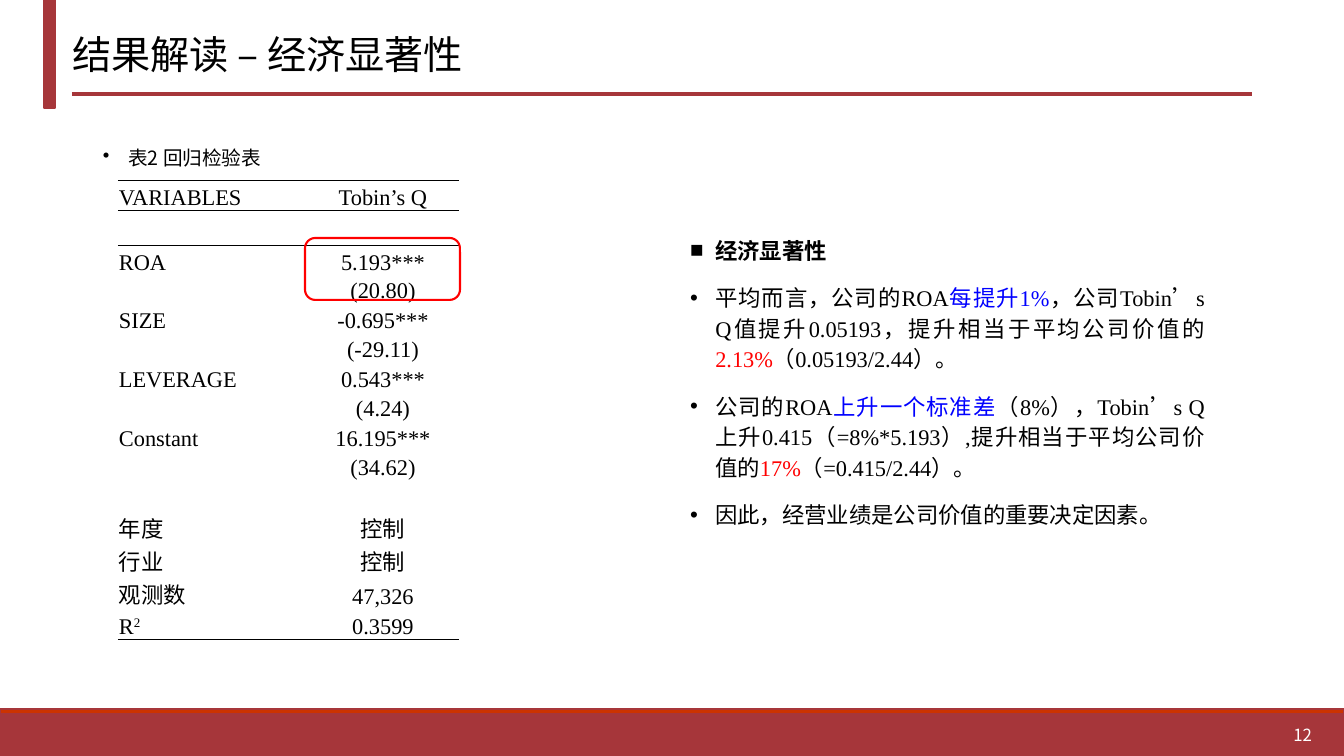
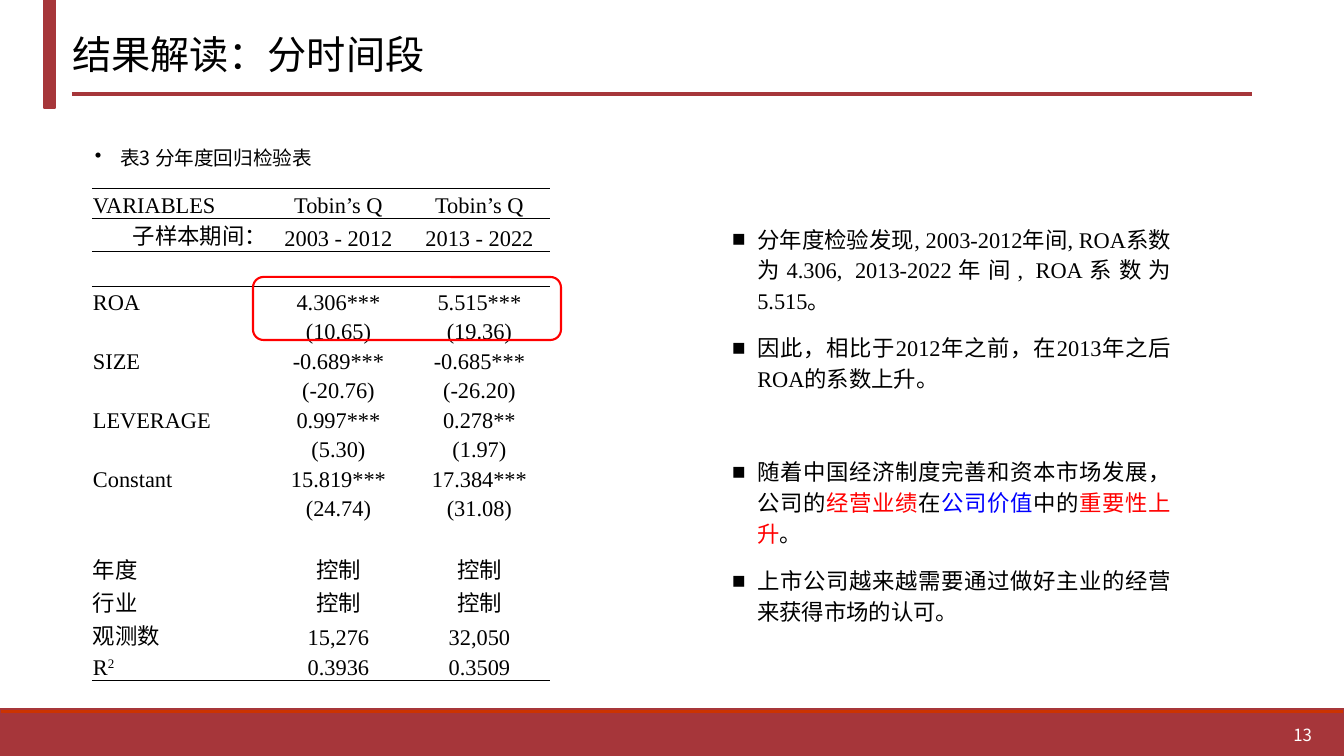
"""Two slides that interpret regression results: economic significance and sub-periods."""
from lxml import etree
from pptx import Presentation
from pptx import util as u
from pptx.dml.color import RGBColor
from pptx.enum import shapes, text
from pptx.oxml import ns

SCALE = 12192000 / 1344
COLORS = {"text": "000000", "band": "A6363A", "edge": "CC3300", "mark": "FF0000",
          "blue": "0000FF", "page": "FFFFFF"}
RGB = {name: RGBColor.from_string(value) for name, value in COLORS.items()}
SANS, SERIF = "Noto Sans CJK SC", "Times New Roman"
NO_STYLE = "{2D5ABB26-0587-4C30-8999-92F81FD0307C}"
FIRST_PAGE = 12
ROW, T_ROW, GAP_ROW, CJK_ROW = 30, 29, 35, 33


def px(*lengths):
    return [u.Emu(round(length * SCALE)) for length in lengths]


def write(paragraph, parts, size, face, align, color="text", bullet=None):
    paragraph.alignment = align
    font = paragraph.font
    font.size, font.name, font.color.rgb = u.Pt(size), face, RGB[color]
    etree.SubElement(font._element, ns.qn("a:ea"), typeface=SANS)
    for content, tint in parts:
        run = paragraph.add_run()
        run.text = content
        if tint != color:
            run.font.color.rgb = RGB[tint]
    if bullet:
        paragraph.line_spacing = 1.14
        paragraph.space_before, paragraph.space_after = u.Pt(0), u.Pt(12)
        props = paragraph._p.get_or_add_pPr()
        props.set("marL", "228600")
        props.set("indent", "-228600")
        mark = etree.Element(ns.qn("a:buChar"), char=bullet)
        props.insert(props.index(font._element), mark)


JUSTIFY, LEFT = text.PP_ALIGN.JUSTIFY, text.PP_ALIGN.LEFT
CENTER, RIGHT = text.PP_ALIGN.CENTER, text.PP_ALIGN.RIGHT

pages = [
    {
        "title": "结果解读 – 经济显著性",
        "caption": ("表2 回归检验表", (93, 138, 220, 41)),
        "origin": (118, 180),
        "columns": (189, 152),
        "header": [("VARIABLES", "Tobin’s Q")],
        "estimates": [
            ("ROA", "5.193***"), ("", "(20.80)"),
            ("SIZE", "-0.695***"), ("", "(-29.11)"),
            ("LEVERAGE", "0.543***"), ("", "(4.24)"),
            ("Constant", "16.195***"), ("", "(34.62)"),
        ],
        "controls": [("年度", "控制"), ("行业", "控制"), ("观测数", "47,326")],
        "fit": ("R", "0.3599"),
        "highlight": (305, 238, 155, 62),
        "body": (680, 228, 535, 346),
        "points": [
            ("■", 0, [("经济显著性", "text")]),
            ("•", 0, [("平均而言，公司的ROA", "text"), ("每提升1%", "blue"),
                      ("，公司Tobin’s Q值提升0.05193，提升相当于平均公司价值的", "text"),
                      ("2.13%", "mark"), ("（0.05193/2.44）。", "text")]),
            ("•", 0, [("公司的ROA", "text"), ("上升一个标准差", "blue"),
                      ("（8%），Tobin’s Q上升0.415（=8%*5.193）,提升相当于平均公司价值的", "text"),
                      ("17%", "mark"), ("（=0.415/2.44）。", "text")]),
            ("•", 0, [("因此，经营业绩是公司价值的重要决定因素。", "text")]),
        ],
        "bold_lead": True,
    },
    {
        "title": "结果解读：分时间段",
        "caption": ("表3 分年度回归检验表", (85, 138, 272, 39)),
        "origin": (92, 188),
        "columns": (176, 141, 141),
        "header": [("VARIABLES", "Tobin’s Q", "Tobin’s Q"),
                   ("子样本期间：", "2003 - 2012", "2013 - 2022")],
        "estimates": [
            ("ROA", "4.306***", "5.515***"), ("", "(10.65)", "(19.36)"),
            ("SIZE", "-0.689***", "-0.685***"), ("", "(-20.76)", "(-26.20)"),
            ("LEVERAGE", "0.997***", "0.278**"), ("", "(5.30)", "(1.97)"),
            ("Constant", "15.819***", "17.384***"), ("", "(24.74)", "(31.08)"),
        ],
        "controls": [("年度", "控制", "控制"), ("行业", "控制", "控制"),
                     ("观测数", "15,276", "32,050")],
        "fit": ("R", "0.3936", "0.3509"),
        "highlight": (253, 277, 308, 63),
        "body": (722, 217, 459, 447),
        "points": [
            ("■", 0, [("分年度检验发现, 2003-2012年间, ROA系数为4.306, "
                       "2013-2022年间, ROA系数为5.515。", "text")]),
            ("■", 0, [("因此，相比于2012年之前，在2013年之后ROA的系数上升。", "text")]),
            ("■", 33, [("随着中国经济制度完善和资本市场发展，公司的", "text"),
                       ("经营业绩", "mark"), ("在", "text"), ("公司价值", "blue"),
                       ("中的", "text"), ("重要性上升", "mark"), ("。", "text")]),
            ("■", 0, [("上市公司越来越需要通过做好主业的经营来获得市场的认可。", "text")]),
        ],
        "bold_lead": False,
    },
]

prs = Presentation()
prs.slide_width, prs.slide_height = px(1344, 756)
layout = prs.slide_layouts[1]
slides = [prs.slides.add_slide(layout) for _ in pages]

for holder in list(layout.placeholders)[2:]:
    holder.element.getparent().remove(holder.element)
heading = layout.placeholders[0]
heading.left, heading.top, heading.width, heading.height = px(62, 0, 1217, 108)

decor = []
for box, fill in [((0, 714, 1344, 42), "band"), ((0, 709, 1344, 5), "edge"),
                  ((44, 0, 11, 108), "band")]:
    band = slides[0].shapes.add_shape(shapes.MSO_SHAPE.RECTANGLE, *px(*box))
    band.shadow.inherit = False
    band.fill.solid()
    band.fill.fore_color.rgb = RGB[fill]
    band.line.color.rgb, band.line.width = RGB["band"], u.Pt(1)
    decor.append(band)
rule = slides[0].shapes.add_connector(shapes.MSO_CONNECTOR.STRAIGHT, *px(72, 94, 1252, 94))
rule.line.color.rgb, rule.line.width = RGB["band"], u.Pt(2.25)
etree.SubElement(rule.element.spPr, ns.qn("a:effectLst"))
decor.append(rule)
for position, part in enumerate(decor, start=2):
    layout.element.cSld.spTree.insert(position, part.element)

for number, (slide, page) in enumerate(zip(slides, pages), start=FIRST_PAGE):
    title, body = slide.placeholders
    title.text_frame.vertical_anchor = text.MSO_ANCHOR.MIDDLE
    write(title.text_frame.paragraphs[0], [(page["title"], "text")], 28, SANS, LEFT)

    footer = slide.shapes.add_textbox(*px(1020, 714, 302, 41)).text_frame
    footer.word_wrap, footer.vertical_anchor = True, text.MSO_ANCHOR.MIDDLE
    write(footer.paragraphs[0], [(str(number), "page")], 12, SANS, RIGHT, "page")

    header, estimates, controls = page["header"], page["estimates"], page["controls"]
    columns = page["columns"]
    blank = ("",) * len(columns)
    rows = [*header, blank, *estimates, blank, *controls, page["fit"]]
    heights = [ROW, CJK_ROW][:len(header)] + [GAP_ROW] + [ROW, T_ROW] * (len(estimates) // 2)
    heights += [ROW] + [CJK_ROW] * len(controls) + [ROW]
    ruled = {*range(len(header) + 1), len(rows)}
    size = (sum(columns), sum(heights))
    frame = slide.shapes.add_table(len(rows), len(columns), *px(*page["origin"], *size))
    table = frame.table
    table.first_row = table.horz_banding = False
    table._tbl.tblPr.find(ns.qn("a:tableStyleId")).text = NO_STYLE
    for column, width in zip(table.columns, px(*columns)):
        column.width = width
    for r, (values, height) in enumerate(zip(rows, px(*heights))):
        table.rows[r].height = height
        for c, value in enumerate(values):
            cell = table.cell(r, c)
            cell.fill.background()
            cell.vertical_anchor = text.MSO_ANCHOR.BOTTOM
            cell.margin_left, cell.margin_right, cell.margin_top, cell.margin_bottom = px(1, 1, 1, 0)
            line = cell.text_frame.paragraphs[0]
            align = CENTER if c else RIGHT if 0 < r < len(header) else LEFT
            write(line, [(value, "text")] if value else [], 16, SERIF, align)
            if value == "R":
                power = line.add_run()
                power.text = "2"
                power._r.get_or_add_rPr().set("baseline", "30000")
            for edge, side in ((r + 1, "a:lnB"), (r, "a:lnT")):
                if edge in ruled:
                    border = etree.Element(ns.qn(side), w=str(u.Pt(0.5)))
                    paint = etree.SubElement(border, ns.qn("a:solidFill"))
                    etree.SubElement(paint, ns.qn("a:srgbClr"), val=COLORS["text"])
                    cell._tc.tcPr.insert(0, border)

    highlight = slide.shapes.add_shape(shapes.MSO_SHAPE.ROUNDED_RECTANGLE, *px(*page["highlight"]))
    highlight.shadow.inherit = False
    highlight.fill.background()
    highlight.line.color.rgb, highlight.line.width = RGB["mark"], u.Pt(1.5)

    body.left, body.top, body.width, body.height = px(*page["body"])
    body.text_frame.auto_size = text.MSO_AUTO_SIZE.NONE
    for i, (bullet, before, parts) in enumerate(page["points"]):
        point = body.text_frame.add_paragraph() if i else body.text_frame.paragraphs[0]
        write(point, parts, 16, SERIF, JUSTIFY, bullet=bullet)
        point.space_before = u.Pt(before)
        point.font.bold = page["bold_lead"] and i == 0

    label, place = page["caption"]
    caption = slide.shapes.add_textbox(*px(*place)).text_frame
    caption.word_wrap = True
    write(caption.paragraphs[0], [(label, "text")], 14, SANS, JUSTIFY, bullet="•")

prs.save("out.pptx")
